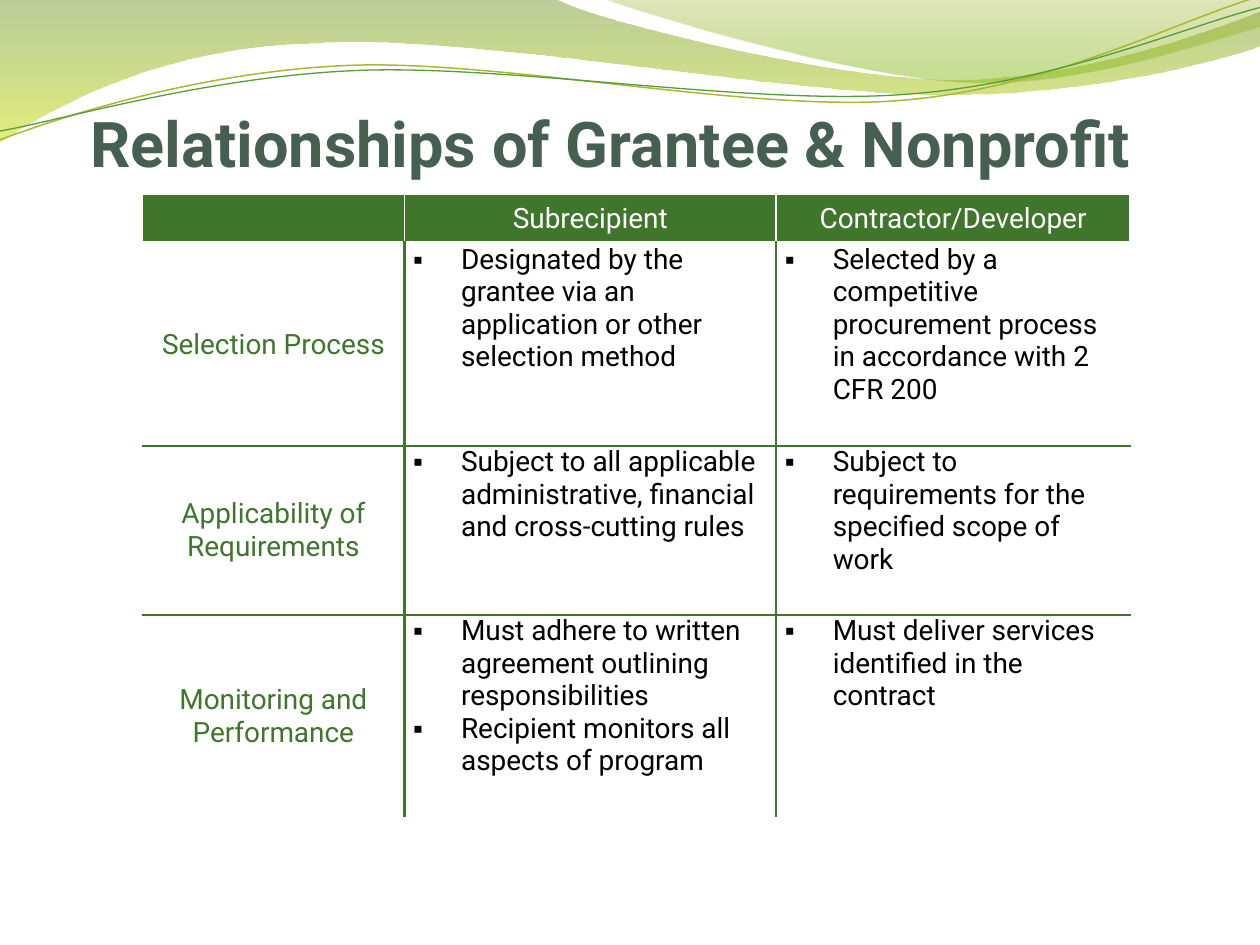
import math
from dataclasses import dataclass

import lxml.etree
import pptx
import pptx.dml.color
import pptx.enum.text
import pptx.oxml.ns
import pptx.util

Inches = pptx.util.Inches
Pt = pptx.util.Pt
qn = pptx.oxml.ns.qn
Point = tuple[float, float]


@dataclass(frozen=True)
class Theme:
    font: str = "Roboto"
    bullet_font: str = "Arial"
    title: str = "455F51"
    accent: str = "3F762B"
    white: str = "FFFFFF"
    body: str = "000000"
    title_size: float = 36
    table_size: float = 16
    rule: float = 1.5
    hairline: float = 1
    header_rule: float = 3


@dataclass(frozen=True)
class Stop:
    position: float
    color: str
    opacity: int


@dataclass(frozen=True)
class Wave:
    start: Point
    segments: tuple[tuple[Point, ...], ...]
    stops: tuple[Stop, ...] = ()
    line_color: str = ""
    line_width: float = 0
    tilt: float = 0
    center: Point = (0, 0)


THEME = Theme()
BULLET_INDENT = 0.38

WAVES = (
    Wave((0, 0), (
        ((4.4, -0.01),),
        ((4.75, 0.17), (6.63, 0.63), (7.58, 0.63)),
        ((8.53, 0.63), (9.58, 0.26), (10, 0.09)),
        ((10.01, 0.36),),
        ((9.83, 0.44), (8.69, 0.76), (7.46, 0.75)),
        ((6.22, 0.75), (3.81, 0.28), (2.57, 0.34)),
        ((1.29, 0.36), (0.46, 0.83), (-0.01, 1.13)),
        ((0, 0),),
    ), stops=(Stop(0, "69921C", 45), Stop(1, "CCE10F", 55))),
    Wave((4.79, -0.01), (
        ((5.09, 0.11), (6.82, 0.62), (7.68, 0.65)),
        ((8.55, 0.69), (9.61, 0.32), (10, 0.21)),
        ((10, 0),),
        ((4.79, -0.01),),
    ), stops=(Stop(0, "9BAA1A", 30), Stop(0.8, "81BA16", 45))),
    Wave((0, 1.11), (
        ((0.48, 0.93), (1.57, 0.57), (2.76, 0.52)),
        ((3.95, 0.47), (5.92, 0.89), (7.12, 0.8)),
        ((8.33, 0.71), (9.38, 0.15), (9.97, -0.02)),
    ), line_color="A9B733", line_width=0.85, tilt=-2.7, center=(4.99, 0.58)),
    Wave((0, 1.04), (
        ((0.47, 0.96), (1.63, 0.61), (2.83, 0.56)),
        ((4.02, 0.51), (5.97, 0.84), (7.17, 0.75)),
        ((8.36, 0.67), (9.41, 0.21), (10, 0.06)),
    ), line_color="549E39", line_width=0.75, tilt=-2.7, center=(5, 0.59)),
)

COLUMN_WIDTHS = (2.08, 2.95, 2.81)
ROW_HEIGHTS = (0.39, 1.61, 1.34, 1.61)
ROWS = (
    ("", "Subrecipient", "Contractor/Developer"),
    ("Selection Process",
     "Designated by the grantee via an application or other selection method",
     "Selected by a competitive procurement process in accordance with 2 CFR 200"),
    ("Applicability of Requirements",
     "Subject to all applicable administrative, financial and cross-cutting rules",
     "Subject to requirements for the specified scope of work"),
    ("Monitoring and Performance",
     "Must adhere to written agreement outlining responsibilities\n"
     "Recipient monitors all aspects of program",
     "Must deliver services identified in the contract"),
)


def rgb(color: str) -> pptx.dml.color.RGBColor:
    return pptx.dml.color.RGBColor.from_string(color)


def format_runs(paragraph, color: str, size: float, bold: bool = False) -> None:
    for run in paragraph.runs:
        run.font.name = THEME.font
        run.font.size = Pt(size)
        run.font.bold = bold
        run.font.color.rgb = rgb(color)


def level(point: Point, wave: Wave) -> Point:
    angle = math.radians(-wave.tilt)
    x, y = point[0] - wave.center[0], point[1] - wave.center[1]
    return (Inches(wave.center[0] + x * math.cos(angle) - y * math.sin(angle)),
            Inches(wave.center[1] + x * math.sin(angle) + y * math.cos(angle)))


def bend(ribbon, wave: Wave) -> None:
    lines = iter(list(ribbon.element.iter(qn("a:lnTo"))))
    for segment in wave.segments:
        first, *others = [next(lines) for _ in segment]
        if others:
            first.tag = qn("a:cubicBezTo")
            for line in others:
                first.append(line[0])
                line.getparent().remove(line)


def draw_wave(slide, wave: Wave) -> None:
    vertices = [level(point, wave) for segment in wave.segments for point in segment]
    builder = slide.shapes.build_freeform(*level(wave.start, wave))
    builder.add_line_segments(vertices, close=bool(wave.stops))
    ribbon = builder.convert_to_shape()
    bend(ribbon, wave)
    ribbon.rotation = wave.tilt
    ribbon.shadow.inherit = False
    if not wave.stops:
        ribbon.fill.background()
        ribbon.line.color.rgb = rgb(wave.line_color)
        ribbon.line.width = Pt(wave.line_width)
        return
    ribbon.line.fill.background()
    ribbon.fill.gradient()
    ribbon.fill.gradient_angle = 270
    for gradient_stop, stop in zip(ribbon.fill.gradient_stops, wave.stops):
        gradient_stop.position = stop.position
        gradient_stop.color.rgb = rgb(stop.color)
    gradient = ribbon.element.spPr.find(qn("a:gradFill"))
    for color, stop in zip(gradient.iter(qn("a:srgbClr")), wave.stops):
        lxml.etree.SubElement(color, qn("a:alpha"), val=str(stop.opacity * 1000))


def set_borders(cell, row: int, column: int) -> None:
    edge = (THEME.white, THEME.hairline)
    rule = (THEME.accent, THEME.rule)
    header = row == 0
    last_row, last_column = len(ROWS) - 1, len(COLUMN_WIDTHS) - 1
    sides = {
        "L": edge if header or column == 0 else rule,
        "R": edge if header or column == last_column else rule,
        "T": edge if row <= 1 else rule,
        "B": (THEME.white, THEME.header_rule) if header else edge if row == last_row else rule,
    }
    properties = cell._tc.get_or_add_tcPr()
    for side, (color, width) in sides.items():
        border = lxml.etree.SubElement(properties, qn(f"a:ln{side}"), w=str(Pt(width)))
        solid = lxml.etree.SubElement(border, qn("a:solidFill"))
        lxml.etree.SubElement(solid, qn("a:srgbClr"), val=color)


def add_bullet(paragraph) -> None:
    properties = paragraph._p.get_or_add_pPr()
    properties.set("marL", str(Inches(BULLET_INDENT)))
    properties.set("indent", str(-Inches(BULLET_INDENT)))
    lxml.etree.SubElement(properties, qn("a:buFont"), typeface=THEME.bullet_font)
    lxml.etree.SubElement(properties, qn("a:buChar"), char="▪")


def fill_cell(cell, row: int, column: int, text: str) -> None:
    header, label = row == 0, column == 0
    cell.margin_left = cell.margin_right = Inches(0.07)
    cell.margin_top = cell.margin_bottom = 0
    set_borders(cell, row, column)
    if header:
        cell.fill.solid()
        cell.fill.fore_color.rgb = rgb(THEME.accent)
    else:
        cell.fill.background()
    centred = header or label
    anchors = pptx.enum.text.MSO_ANCHOR
    cell.vertical_anchor = anchors.MIDDLE if centred else anchors.TOP
    cell.text_frame.text = text
    color = THEME.white if header else THEME.accent if label else THEME.body
    for paragraph in cell.text_frame.paragraphs:
        if centred:
            paragraph.alignment = pptx.enum.text.PP_ALIGN.CENTER
        else:
            add_bullet(paragraph)
        format_runs(paragraph, color, THEME.table_size)


def draw_comparison(slide) -> None:
    comparison = slide.shapes.add_table(
        len(ROWS), len(COLUMN_WIDTHS), Inches(1.13), Inches(1.54),
        Inches(sum(COLUMN_WIDTHS)), Inches(sum(ROW_HEIGHTS)),
    ).table
    comparison.first_row = comparison.horz_banding = False
    for column, width in zip(comparison.columns, COLUMN_WIDTHS):
        column.width = Inches(width)
    for row, height in zip(comparison.rows, ROW_HEIGHTS):
        row.height = Inches(height)
    for row, texts in enumerate(ROWS):
        for column, text in enumerate(texts):
            fill_cell(comparison.cell(row, column), row, column, text)


def draw_title(slide) -> None:
    title = slide.shapes.title
    title.left, title.top = Inches(0.72), Inches(0.77)
    title.width, title.height = Inches(9.02), Inches(0.66)
    frame = title.text_frame
    frame.text = "Relationships of Grantee & Nonprofit"
    frame.margin_left = frame.margin_right = frame.margin_bottom = 0
    frame.margin_top = Inches(0.05)
    frame.word_wrap = True
    frame.auto_size = pptx.enum.text.MSO_AUTO_SIZE.NONE
    frame.vertical_anchor = pptx.enum.text.MSO_ANCHOR.BOTTOM
    frame.paragraphs[0].alignment = pptx.enum.text.PP_ALIGN.LEFT
    format_runs(frame.paragraphs[0], THEME.title, THEME.title_size, bold=True)
    slide.shapes.element.append(title.element)


def main() -> None:
    deck = pptx.Presentation()
    deck.slide_width, deck.slide_height = Inches(10), Inches(7.5)
    slide = deck.slides.add_slide(deck.slide_layouts.get_by_name("Title Only"))
    for wave in WAVES:
        draw_wave(slide, wave)
    draw_title(slide)
    draw_comparison(slide)
    deck.save("out.pptx")


if __name__ == "__main__":
    main()
